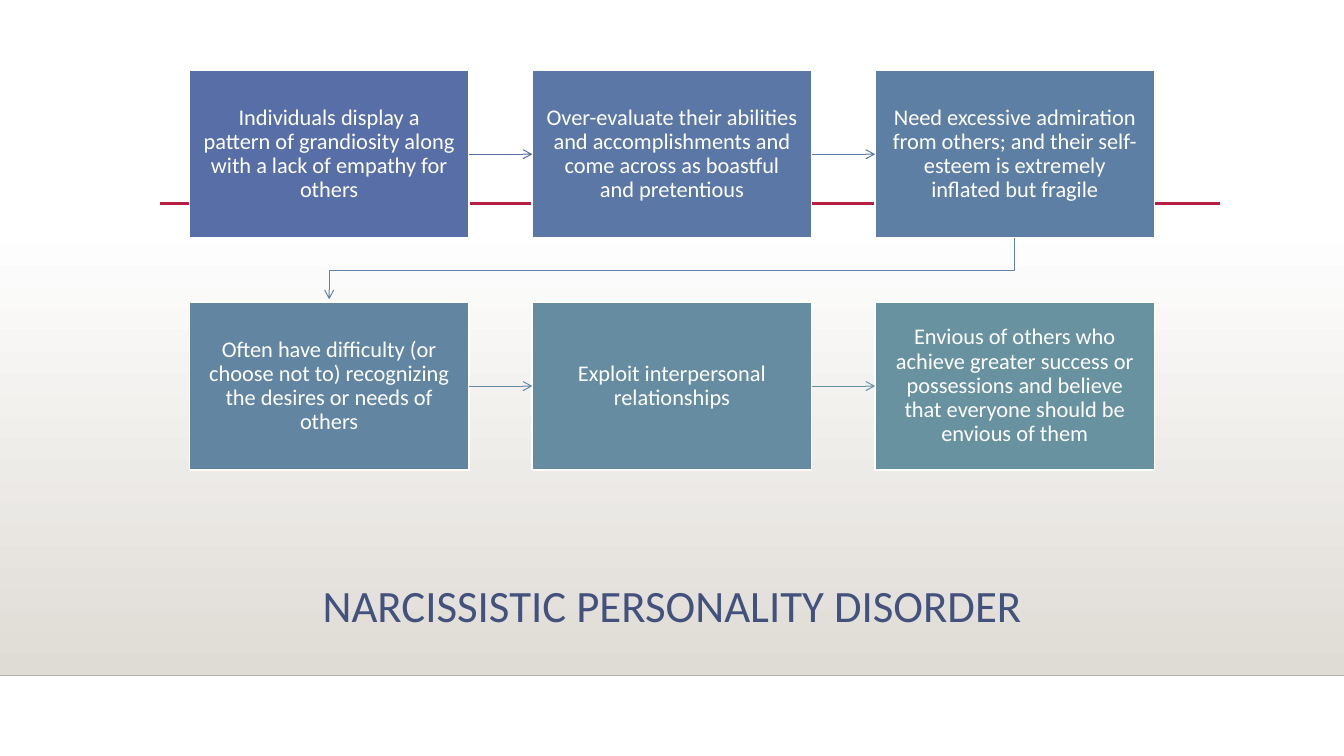
"""Build a slide that traces narcissistic personality disorder in six linked boxes."""
import pptx
import pptx.util
import pptx.dml.color
import pptx.enum.shapes
import pptx.enum.text
import pptx.oxml
import pptx.oxml.ns

Inches = pptx.util.Inches
Pt = pptx.util.Pt
Color = pptx.dml.color.RGBColor.from_string
Shape = pptx.enum.shapes.MSO_SHAPE
Straight = pptx.enum.shapes.MSO_CONNECTOR.STRAIGHT
Anchor = pptx.enum.text.MSO_ANCHOR

THEME = {
    "font": "Calibri", "title_size": 32, "box_size": 16,
    "title": "42527C", "white": "FFFFFF", "band": "DFDBD5",
    "floor": "B3B0AB", "rule": "B71E42",
    "boxes": ["586EA6", "5B77A5", "5E7FA4", "6286A2", "658CA1", "6892A0"],
    "arrows": ["586EA6", "5C79A5", "6083A3", "648BA2", "6892A0"],
}
STEPS = [
    "Individuals display a pattern of grandiosity along with a lack of empathy for others",
    "Over-evaluate their abilities and accomplishments and come across as boastful and pretentious",
    "Need excessive admiration from others; and their self-esteem is extremely inflated but fragile",
    "Often have difficulty (or choose not to) recognizing the desires or needs of others",
    "Exploit interpersonal relationships",
    "Envious of others who achieve greater success or possessions and believe that everyone should be envious of them",
]
COLUMNS = 3
LEFT, TOP = Inches(1.88), Inches(0.7)
BOX_WIDTH, BOX_HEIGHT = Inches(2.77), Inches(1.66)
COLUMN_STEP, ROW_STEP = Inches(3.4), Inches(2.3)


def write_text(frame, text, size, color, anchor):
    frame.word_wrap = True
    frame.vertical_anchor = anchor
    para = frame.paragraphs[0]
    para.alignment = pptx.enum.text.PP_ALIGN.CENTER
    para.line_spacing = 0.9
    span = para.add_run()
    span.text = text
    span.font.name = THEME["font"]
    span.font.size = Pt(size)
    span.font.color.rgb = Color(color)


def style_line(line_shape, color, width, arrow=False):
    line_shape.line.color.rgb = Color(color)
    line_shape.line.width = Pt(width)
    properties = line_shape.element.spPr
    if arrow:
        outline = properties.find(pptx.oxml.ns.qn("a:ln"))
        head = pptx.oxml.parse_xml(f'<a:tailEnd {pptx.oxml.ns.nsdecls("a")} type="arrow"/>')
        outline.append(head)
    properties.append(pptx.oxml.parse_xml(f'<a:effectLst {pptx.oxml.ns.nsdecls("a")}/>'))


deck = pptx.Presentation()
deck.slide_width, deck.slide_height = Inches(13.33), Inches(7.5)
page = deck.slides.add_slide(deck.slide_layouts.get_by_name("Title Only"))

band_top, band_bottom = Inches(2.21), Inches(6.7)
band = page.shapes.add_shape(Shape.RECTANGLE, 0, band_top, deck.slide_width, band_bottom - band_top)
band.shadow.inherit = False
band.line.fill.background()
band.fill.gradient()
band.fill.gradient_angle = 270
for stop, color in zip(band.fill.gradient_stops, (THEME["white"], THEME["band"])):
    stop.color.rgb = Color(color)

floor = page.shapes.add_connector(Straight, 0, band_bottom, deck.slide_width, band_bottom)
style_line(floor, THEME["floor"], 1)
rule = page.shapes.add_connector(Straight, Inches(1.59), Inches(2.02), Inches(12.1), Inches(2.02))
style_line(rule, THEME["rule"], 2.5)

title = page.shapes.title
title.left, title.top, title.width, title.height = map(Inches, (1.17, 5.74, 11, 1.13))
write_text(title.text_frame, "NARCISSISTIC PERSONALITY DISORDER",
           THEME["title_size"], THEME["title"], Anchor.TOP)
title.element.getparent().append(title.element)

boxes = []
for index, (step, color) in enumerate(zip(STEPS, THEME["boxes"])):
    row, column = divmod(index, COLUMNS)
    box = page.shapes.add_shape(Shape.RECTANGLE, LEFT + column * COLUMN_STEP,
                                TOP + row * ROW_STEP, BOX_WIDTH, BOX_HEIGHT)
    box.shadow.inherit = False
    box.fill.solid()
    box.fill.fore_color.rgb = Color(color)
    box.line.color.rgb = Color(THEME["white"])
    box.line.width = Pt(1.25)
    frame = box.text_frame
    frame.margin_left = frame.margin_right = frame.margin_top = frame.margin_bottom = Inches(0.14)
    write_text(frame, step, THEME["box_size"], THEME["white"], Anchor.MIDDLE)
    boxes.append(box)

for index, color in enumerate(THEME["arrows"]):
    start, end = boxes[index], boxes[index + 1]
    if start.top == end.top:
        arrow = page.shapes.add_connector(Straight, 0, 0, 0, 0)
        arrow.begin_connect(start, 3)
        arrow.end_connect(end, 1)
    else:
        start_x, end_x = (box.left + BOX_WIDTH // 2 for box in (start, end))
        start_y = start.top + BOX_HEIGHT
        turn_y = (start_y + end.top) // 2
        bend = page.shapes.build_freeform(start_x, start_y)
        bend.add_line_segments([(start_x, turn_y), (end_x, turn_y),
                                (end_x, end.top - Inches(0.03))], close=False)
        arrow = bend.convert_to_shape()
        arrow.fill.background()
    style_line(arrow, color, 0.75, arrow=True)

deck.save("out.pptx")
